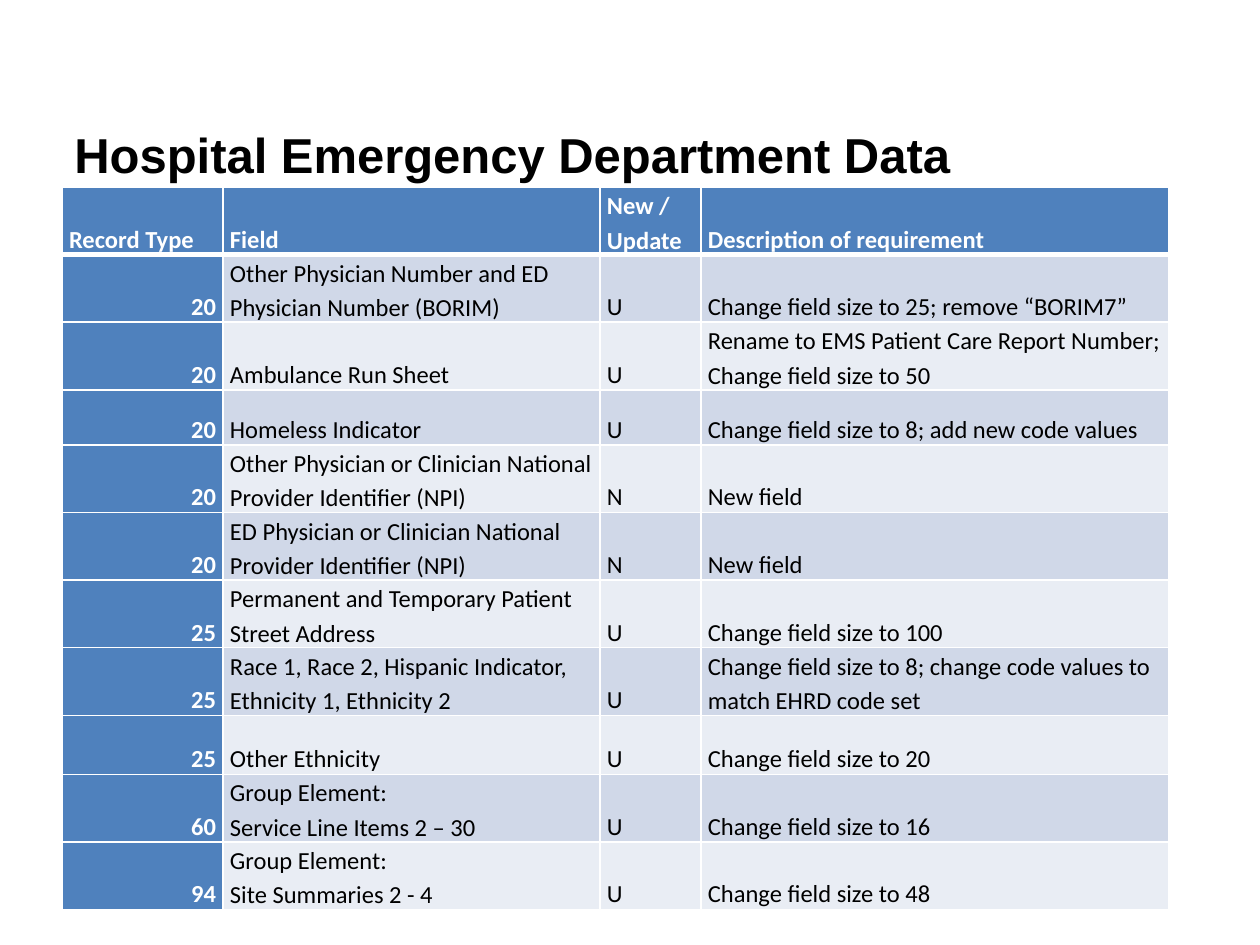
import dataclasses

import lxml.etree
import pptx
import pptx.dml.color
import pptx.enum.text
import pptx.oxml.ns
import pptx.util

PX = 914400 // 126


@dataclasses.dataclass(frozen=True)
class Theme:
    """Colours, fonts and type sizes."""
    accent: str = "4F81BD"
    bands: tuple = ("D0D8E8", "E9EDF4")
    light: str = "FFFFFF"
    dark: str = "000000"
    title_font: str = "Arial"
    table_font: str = "Calibri"
    title_size: int = 28
    table_size: int = 14


THEME = Theme()
COLUMN_WIDTHS = (161, 377, 101, 468)
ROW_HEIGHTS = (66, 66, 66, 55, 66, 66, 66, 66, 59, 66, 66)
REQUIREMENTS = (
    ("Record Type", "Field", "New / Update", "Description of requirement"),
    ("20", "Other Physician Number and ED Physician Number (BORIM)", "U",
     "Change field size to 25; remove “BORIM7”"),
    ("20", "Ambulance Run Sheet", "U",
     "Rename to EMS Patient Care Report Number; Change field size to 50"),
    ("20", "Homeless Indicator", "U", "Change field size to 8; add new code values"),
    ("20", "Other Physician or Clinician National Provider Identifier (NPI)", "N", "New field"),
    ("20", "ED Physician or Clinician National Provider Identifier (NPI)", "N", "New field"),
    ("25", "Permanent and Temporary Patient Street Address", "U", "Change field size to 100"),
    ("25", "Race 1, Race 2, Hispanic Indicator, Ethnicity 1, Ethnicity 2", "U",
     "Change field size to 8; change code values to match EHRD code set"),
    ("25", "Other Ethnicity", "U", "Change field size to 20"),
    ("60", "Group Element:\nService Line Items 2 – 30", "U", "Change field size to 16"),
    ("94", "Group Element:\nSite Summaries 2 - 4", "U", "Change field size to 48"),
)


def color(value):
    """Return an RGB colour from its hex value."""
    return pptx.dml.color.RGBColor.from_string(value)


def style_font(font, name, size, value, bold):
    """Set the face, size, colour and weight of a font."""
    font.name = name
    font.size = pptx.util.Pt(size)
    font.color.rgb = color(value)
    font.bold = bold


def add_borders(cell, widths):
    """Draw light cell borders, with widths in points keyed by side."""
    properties = cell._tc.get_or_add_tcPr()
    for side, width in widths.items():
        line = lxml.etree.SubElement(
            properties, pptx.oxml.ns.qn(f"a:ln{side}"), w=str(pptx.util.Pt(width)))
        fill = lxml.etree.SubElement(line, pptx.oxml.ns.qn("a:solidFill"))
        lxml.etree.SubElement(fill, pptx.oxml.ns.qn("a:srgbClr"), val=THEME.light)


def fill_cell(cell, text, row, column):
    """Write and style one cell according to its place in the table."""
    is_heading = row == 0 or column == 0
    add_borders(cell, {"L": 1, "R": 1, "T": 3 if row == 1 else 1, "B": 3 if row == 0 else 1})
    cell.fill.solid()
    cell.fill.fore_color.rgb = color(THEME.accent if is_heading else THEME.bands[(row - 1) % 2])
    cell.vertical_anchor = pptx.enum.text.MSO_ANCHOR.BOTTOM
    cell.margin_left = cell.margin_right = 7 * PX
    cell.margin_top = cell.margin_bottom = 0
    cell.text = text
    for paragraph in cell.text_frame.paragraphs:
        paragraph.line_spacing = 1.15
        if column == 0 and row > 0:
            paragraph.alignment = pptx.enum.text.PP_ALIGN.RIGHT
        style_font(paragraph.font, THEME.table_font, THEME.table_size,
                   THEME.light if is_heading else THEME.dark, is_heading)


def add_title(slide, text, left, top, width, height):
    """Add the slide title, centred vertically in its box."""
    shape = slide.shapes.add_textbox(left * PX, top * PX, width * PX, height * PX)
    frame = shape.text_frame
    frame.word_wrap = True
    frame.vertical_anchor = pptx.enum.text.MSO_ANCHOR.MIDDLE
    paragraph = frame.paragraphs[0]
    paragraph.text = text
    style_font(paragraph.font, THEME.title_font, THEME.title_size, THEME.dark, True)


def add_requirements_table(slide, left, top):
    """Add the table of field requirements at the given corner."""
    table = slide.shapes.add_table(
        len(ROW_HEIGHTS), len(COLUMN_WIDTHS), left * PX, top * PX,
        sum(COLUMN_WIDTHS) * PX, sum(ROW_HEIGHTS) * PX).table
    table.first_col = True
    for column, width in zip(table.columns, COLUMN_WIDTHS):
        column.width = width * PX
    for row, height in zip(table.rows, ROW_HEIGHTS):
        row.height = height * PX
    for row, texts in enumerate(REQUIREMENTS):
        for column, text in enumerate(texts):
            fill_cell(table.cell(row, column), text, row, column)


def main():
    """Build the slide and save it."""
    presentation = pptx.Presentation()
    presentation.slide_width = 1260 * PX
    presentation.slide_height = 945 * PX
    slide = presentation.slides.add_slide(presentation.slide_layouts[6])
    add_title(slide, "Hospital Emergency Department Data", 62, 72, 1107, 164)
    add_requirements_table(slide, 62, 187)
    presentation.save("out.pptx")


if __name__ == "__main__":
    main()
